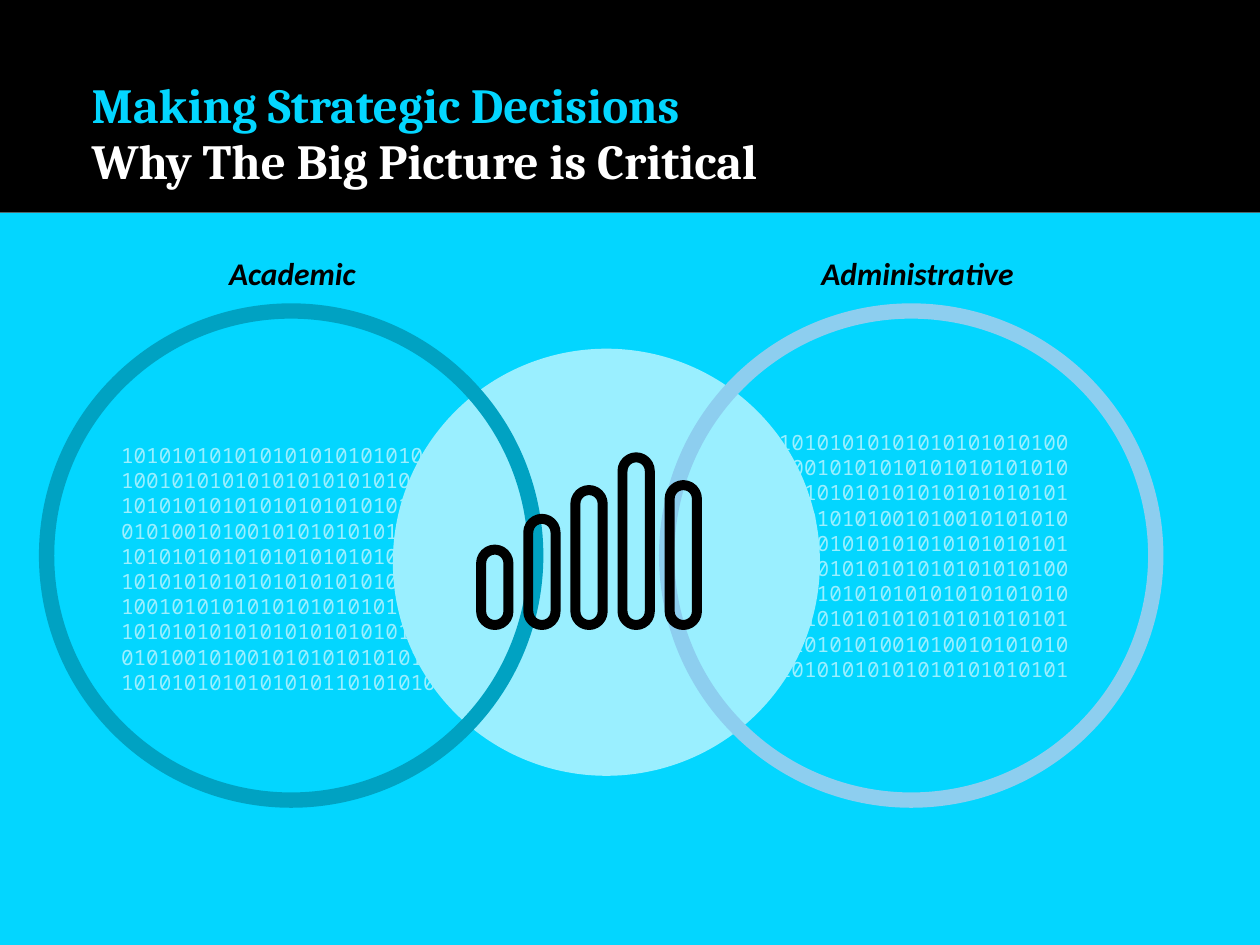
from pptx import Presentation
from pptx.dml.color import RGBColor
from pptx.enum.shapes import MSO_SHAPE
from pptx.enum.text import MSO_ANCHOR, PP_ALIGN
from pptx.util import Cm, Pt

RECTANGLE, OVAL, PILL = MSO_SHAPE.RECTANGLE, MSO_SHAPE.OVAL, MSO_SHAPE.ROUNDED_RECTANGLE
TOP, MIDDLE, BOTTOM = MSO_ANCHOR.TOP, MSO_ANCHOR.MIDDLE, MSO_ANCHOR.BOTTOM
LEFT, CENTER = PP_ALIGN.LEFT, PP_ALIGN.CENTER

BLACK = RGBColor(0x00, 0x00, 0x00)
WHITE = RGBColor(0xFF, 0xFF, 0xFF)
CYAN = RGBColor(0x03, 0xD6, 0xFF)
PALE_CYAN = RGBColor(0x9A, 0xEF, 0xFF)
TEAL = RGBColor(0x00, 0xA2, 0xC2)
SOFT_BLUE = RGBColor(0x8D, 0xCE, 0xEF)

ACADEMIC_BITS = [
    "101010101010101010101010010100101010101010101010101010101010101010101010101010101010100101001010101010101010101010101010101010101010101101010101010101010101010010100101010101010101010101010101010101010101010101010101010100101001010101010101010101010101010101011010101010",
]
ADMINISTRATIVE_BITS = [
    "10101010101010101010101001010010101010101010101010101010101010101010101010101010101010010100101010101010101010101010101010101",
    "10101010101010101010101001010010101010101010101010101010101010101010101010101010101010010100101010101010101010101010101010101",
]


def add_outline(kind, left, top, width, height, fill=None, line=None, weight=0):
    """Add a preset shape, in cm, with an optional fill and line."""
    shape = page.shapes.add_shape(kind, Cm(left), Cm(top), Cm(width), Cm(height))
    shape.shadow.inherit = False
    if fill is None:
        shape.fill.background()
    else:
        shape.fill.solid()
        shape.fill.fore_color.rgb = fill
    if line is None:
        shape.line.fill.background()
    else:
        shape.line.color.rgb = line
        shape.line.width = Pt(weight)
    return shape


def write(shape, lines, font, size, color, bold=False, italic=False, align=LEFT,
          anchor=TOP, wrap=True, spacing=None, insets=(0, 0, 0, 0)):
    """Put one paragraph per line in a shape; insets are left, top, right, bottom in cm."""
    frame = shape.text_frame
    frame.word_wrap = wrap
    frame.vertical_anchor = anchor
    frame.margin_left, frame.margin_top, frame.margin_right, frame.margin_bottom = map(Cm, insets)
    for index, line in enumerate(lines):
        para = frame.add_paragraph() if index else frame.paragraphs[0]
        para.alignment = align
        para.line_spacing = spacing
        span = para.add_run()
        span.text = line
        span.font.name = font
        span.font.size = Pt(size)
        span.font.bold = bold
        span.font.italic = italic
        span.font.color.rgb = color


deck = Presentation()
deck.slide_width, deck.slide_height = Cm(25.4), Cm(19.05)
page = deck.slides.add_slide(deck.slide_layouts[6])

# Header band and body
HEADER = 4.29
add_outline(RECTANGLE, 0, 0, 25.4, HEADER, fill=BLACK)
add_outline(RECTANGLE, 0, HEADER, 25.4, 19.05 - HEADER, fill=CYAN)

# Shared centre, with one labelled ring on each side
add_outline(OVAL, 7.92, 7.03, 8.61, 8.61, fill=PALE_CYAN)
rings = [
    (13.44, SOFT_BLUE, ADMINISTRATIVE_BITS, (0.25, 0.25, 0.25, 0.25),
     "Administrative", 16.31, 4.6),
    (0.94, TEAL, ACADEMIC_BITS, (0, 0.52, 0, 0), "Academic", 4.37, 3.25),
]
for left, color, bits, insets, name, name_left, name_width in rings:
    ring = add_outline(OVAL, left, 6.27, 9.86, 9.86, line=color, weight=8.75)
    write(ring, bits, "Noto Sans Mono", 12, PALE_CYAN, align=CENTER, anchor=MIDDLE, insets=insets)
    label = page.shapes.add_textbox(Cm(name_left), Cm(5), Cm(name_width), Cm(1.02))
    write(label, [name], "Calibri", 18, BLACK, bold=True, italic=True, wrap=False,
          insets=(0.25, 0.13, 0.25, 0.13))

# Bar icon: hollow pills on a common base, outline drawn inside each bar
BAR_BASE, BAR_WIDTH, BAR_STEP, STROKE = 12.7, 0.75, 0.95, 0.2
for index, height in enumerate([1.72, 2.34, 2.92, 3.58, 3.02]):
    bar = add_outline(PILL, 9.6 + index * BAR_STEP + STROKE / 2, BAR_BASE - height + STROKE / 2,
                      BAR_WIDTH - STROKE, height - STROKE, line=BLACK, weight=5.7)
    bar.adjustments[0] = 0.5

# Title and subtitle
headings = [
    ("Making Strategic Decisions", 1.68, CYAN, BOTTOM, 0),
    ("Why The Big Picture is Critical", 2.69, WHITE, TOP, 0.13),
]
for text, top, color, anchor, inset in headings:
    box = page.shapes.add_textbox(Cm(1.85), Cm(top), Cm(22), Cm(1.02))
    write(box, [text], "Cambria", 28, color, bold=True, anchor=anchor, spacing=0.85,
          insets=(0, inset, 0, 0))

deck.save("out.pptx")
